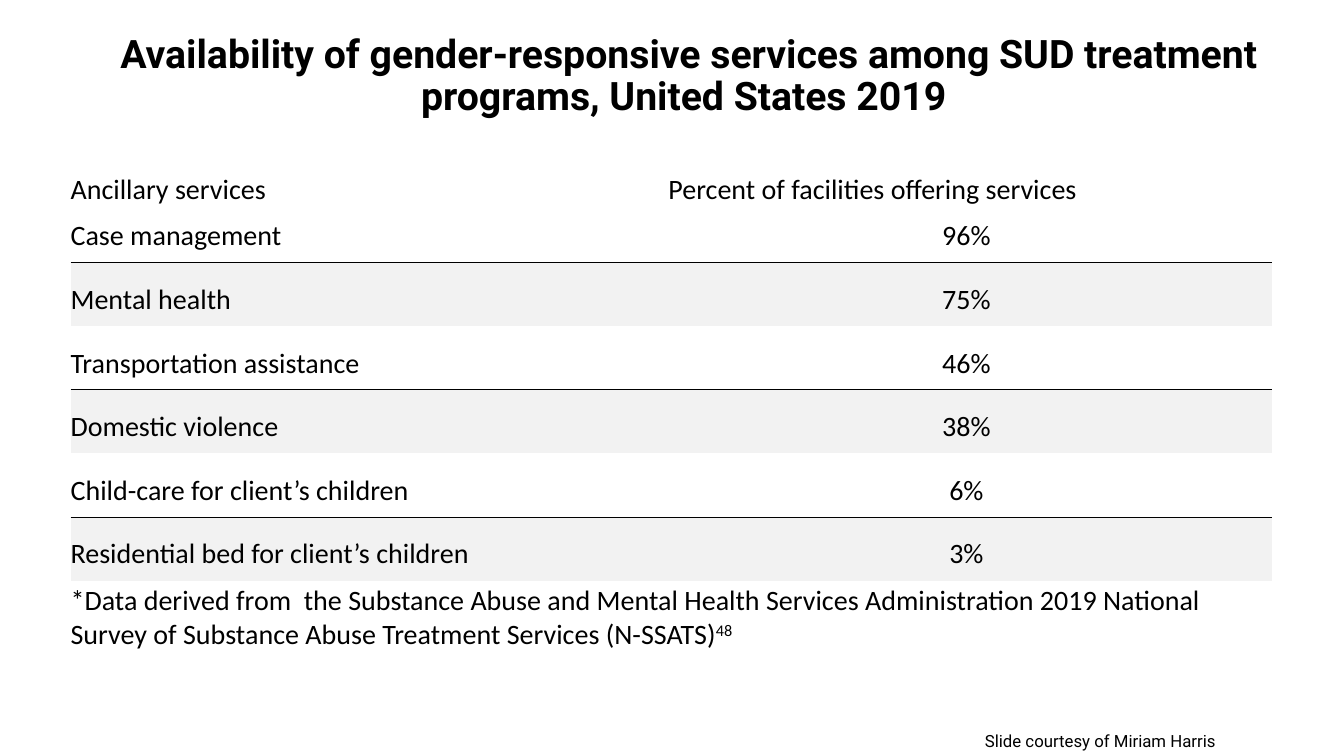
"""Build a slide with a table of gender-responsive services in treatment programs."""
from lxml import etree
from pptx import Presentation
from pptx.dml.color import RGBColor
from pptx.enum.text import MSO_ANCHOR, PP_ALIGN
from pptx.oxml.ns import qn
from pptx.util import Inches, Pt

LEFT, CENTER = PP_ALIGN.LEFT, PP_ALIGN.CENTER
TOP, MIDDLE, BOTTOM = MSO_ANCHOR.TOP, MSO_ANCHOR.MIDDLE, MSO_ANCHOR.BOTTOM

TITLE = ("Availability of gender-responsive services among SUD treatment "
         "programs, United States 2019 ")
HEADER = ("Ancillary services", "Percent of facilities offering services")
SERVICES = [
    ("Case management", "96%"),
    ("Mental health", "75%"),
    ("Transportation assistance", "46%"),
    ("Domestic violence", "38%"),
    ("Child-care for client’s children", "6%"),
    ("Residential bed for client’s children", "3%"),
]
FOOTNOTE = ("*Data derived from  the Substance Abuse and Mental Health Services "
            "Administration 2019 National Survey of Substance Abuse Treatment "
            "Services (N-SSATS)")
REFERENCE = "48"
CREDIT = "Slide courtesy of Miriam Harris"

COLORS = {"text": "000000", "rule": "000000", "band": "F2F2F2"}
HEAD_FONT, BODY_FONT = "Roboto", "Calibri"
SLIDE_W, SLIDE_H = 13.33, 7.5
MARGIN = 0.7
COL_WIDTHS = (5.93, 5.99)
ROW_HEIGHTS = [0.44, 0.45] + [0.54] * 5 + [0.72]
PLAIN_STYLE = "{2D5ABB26-0587-4C30-8999-92F81FD0307C}"


def add_run(p, text, font, size, bold=False):
    r = p.add_run()
    r.text = text
    r.font.name, r.font.size, r.font.bold = font, Pt(size), bold
    r.font.color.rgb = RGBColor.from_string(COLORS["text"])
    return r


def add_text(slide, box, text, size, bold=False, align=LEFT, anchor=TOP, spacing=1.0):
    tf = slide.shapes.add_textbox(*map(Inches, box)).text_frame
    tf.word_wrap, tf.vertical_anchor = True, anchor
    p = tf.paragraphs[0]
    p.alignment, p.line_spacing = align, spacing
    add_run(p, text, HEAD_FONT, size, bold)


def set_borders(cell, ruled):
    tc_pr = cell._tc.get_or_add_tcPr()
    for side in ("lnL", "lnR", "lnT", "lnB"):
        ln = etree.SubElement(tc_pr, qn(f"a:{side}"), w=str(Pt(0.75)))
        if side in ruled:
            fill = etree.SubElement(ln, qn("a:solidFill"))
            etree.SubElement(fill, qn("a:srgbClr"), val=COLORS["rule"])
        else:
            etree.SubElement(ln, qn("a:noFill"))


def fill_cell(cell, text, align=LEFT, spacing=1.0, anchor=TOP, ruled=(), band=False):
    cell.margin_left, cell.margin_right = 0, Inches(0.08)
    cell.margin_top = Inches(0.02 if anchor == BOTTOM else 0.03)
    cell.margin_bottom = Inches(0.1)
    cell.vertical_anchor = anchor
    set_borders(cell, ruled)
    if band:
        cell.fill.solid()
        cell.fill.fore_color.rgb = RGBColor.from_string(COLORS["band"])
    else:
        cell.fill.background()
    p = cell.text_frame.paragraphs[0]
    p.alignment, p.line_spacing = align, spacing
    add_run(p, text, BODY_FONT, 20)
    return p


def add_services_table(slide):
    box = (MARGIN, 1.69, sum(COL_WIDTHS), sum(ROW_HEIGHTS))
    frame = slide.shapes.add_table(len(ROW_HEIGHTS), len(COL_WIDTHS), *map(Inches, box))
    table = frame.table
    table.first_row = table.horz_banding = False
    table._tbl.tblPr.find(qn("a:tableStyleId")).text = PLAIN_STYLE
    for col, width in zip(table.columns, COL_WIDTHS):
        col.width = Inches(width)
    for row, height in zip(table.rows, ROW_HEIGHTS):
        row.height = Inches(height)

    for c, text in enumerate(HEADER):
        fill_cell(table.cell(0, c), text, anchor=BOTTOM)
    for i, service in enumerate(SERVICES):
        band = i % 2 == 1
        for c, text in enumerate(service):
            fill_cell(table.cell(i + 1, c), text, (LEFT, CENTER)[c],
                      1.5 if i else 1.0, ruled=("lnT",) if band else ("lnB",), band=band)

    last = len(ROW_HEIGHTS) - 1
    table.cell(last, 0).merge(table.cell(last, 1))
    p = fill_cell(table.cell(last, 0), FOOTNOTE)
    r = add_run(p, REFERENCE, BODY_FONT, 20)
    r.font._element.set("baseline", "30000")


def main():
    prs = Presentation()
    prs.slide_width, prs.slide_height = Inches(SLIDE_W), Inches(SLIDE_H)
    slide = prs.slides.add_slide(prs.slide_layouts[6])
    add_text(slide, (MARGIN, 0.36, 12.26, 0.81), TITLE, 28, True, CENTER, MIDDLE, 0.9)
    add_services_table(slide)
    add_text(slide, (9.67, SLIDE_H - 0.3, 3.03, 0.3), CREDIT, 12)
    prs.save("out.pptx")


if __name__ == "__main__":
    main()
